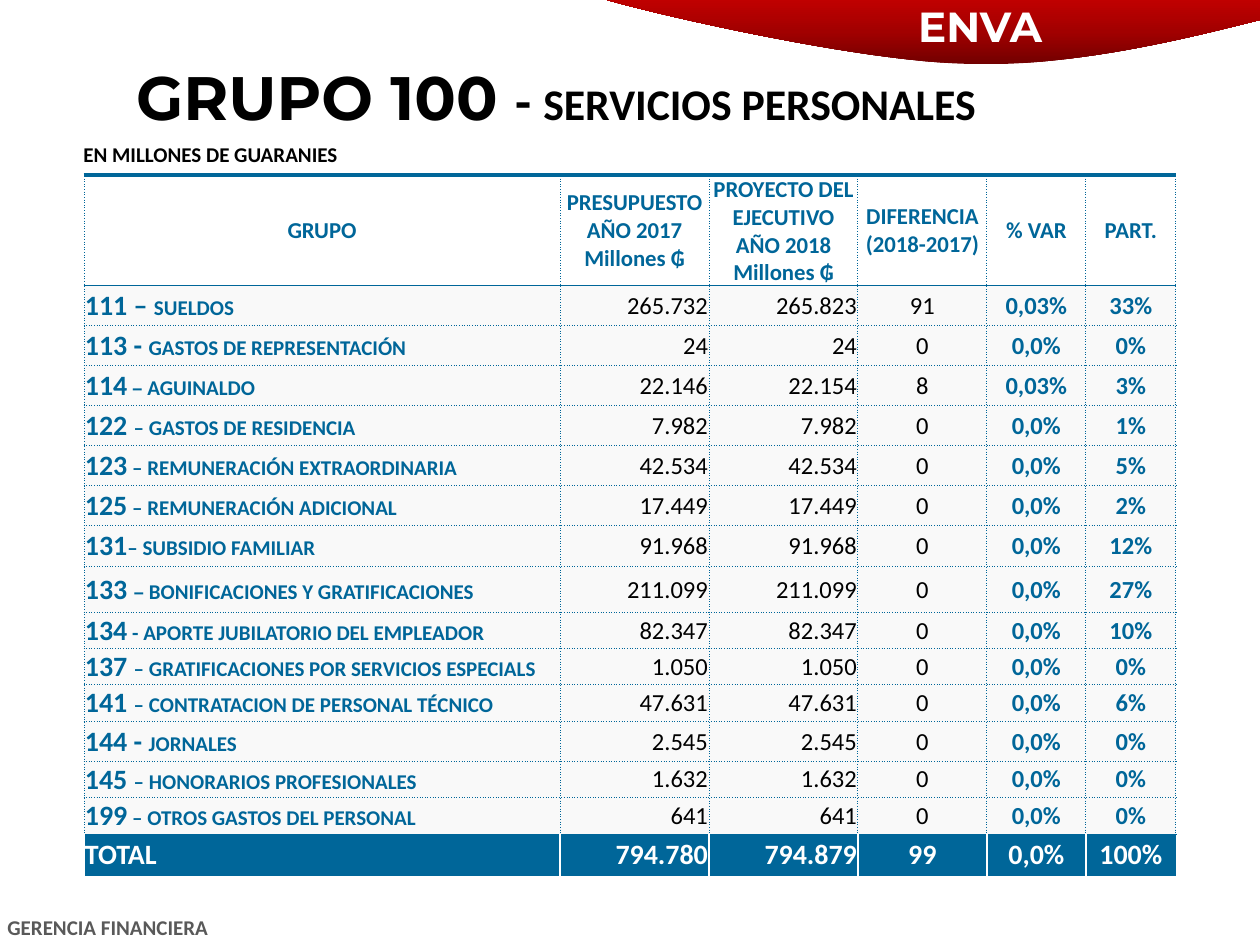
from typing import NamedTuple
from copy import deepcopy

from lxml import etree
from pptx import Presentation
from pptx.dml.color import RGBColor
from pptx.enum.text import MSO_ANCHOR, MSO_AUTO_SIZE, PP_ALIGN
from pptx.oxml.ns import qn
from pptx.util import Pt

LEFT, MID, RIGHT = PP_ALIGN.LEFT, PP_ALIGN.CENTER, PP_ALIGN.RIGHT
CENTRE, BOTTOM = MSO_ANCHOR.MIDDLE, MSO_ANCHOR.BOTTOM
FIXED = MSO_AUTO_SIZE.NONE
EMU = 914400 / 126
HEX = {"blue": "006699", "pale": "F9F9F9", "white": "FFFFFF", "black": "000000",
       "grey": "595959", "dark": "720000", "wine": "A20000", "red": "C00000"}


class Row(NamedTuple):
    code: str
    name: str
    old: str
    new: str
    diff: str
    var: str
    part: str
    high: int
    dash: str = ""


class Line(NamedTuple):
    color: str
    width: float
    dash: str = "solid"


DOT, THIN = Line("blue", 0.5, "sysDot"), Line("blue", 1)
THICK, WHITE = Line("blue", 2.25), Line("white", 1)

WIDE = [476, 149, 149, 129, 99, 90]
ALIGN = [LEFT, RIGHT, RIGHT, MID, MID, MID]
HEAD_HIGH, TOTAL_HIGH = 110, 41
HEADS = [["GRUPO"], ["PRESUPUESTO", "AÑO 2017", "Millones ₲"],
         ["PROYECTO DEL EJECUTIVO", "AÑO 2018", "Millones ₲"],
         ["DIFERENCIA (2018-2017)"], ["% VAR"], ["PART."]]
ROWS = [
    Row("111 – ", "SUELDOS", "265.732", "265.823", "91", "0,03%", "33%", 40),
    Row("113 - ", "GASTOS DE REPRESENTACIÓN", "24", "24", "0", "0,0%", "0%", 40),
    Row("114", " AGUINALDO", "22.146", "22.154", "8", "0,03%", "3%", 40, " –"),
    Row("122 ", "– GASTOS DE RESIDENCIA", "7.982", "7.982", "0", "0,0%", "1%", 40),
    Row("123", " – REMUNERACIÓN EXTRAORDINARIA", "42.534", "42.534", "0", "0,0%", "5%", 40),
    Row("125", " – REMUNERACIÓN ADICIONAL", "17.449", "17.449", "0", "0,0%", "2%", 40),
    Row("131", "– SUBSIDIO FAMILIAR", "91.968", "91.968", "0", "0,0%", "12%", 41),
    Row("133 ", "BONIFICACIONES Y GRATIFICACIONES", "211.099", "211.099", "0", "0,0%", "27%", 46, "– "),
    Row("134", " - APORTE JUBILATORIO DEL EMPLEADOR", "82.347", "82.347", "0", "0,0%", "10%", 36),
    Row("137 ", "– GRATIFICACIONES POR SERVICIOS ESPECIALS", "1.050", "1.050", "0", "0,0%", "0%", 36),
    Row("141 ", "– CONTRATACION DE PERSONAL TÉCNICO", "47.631", "47.631", "0", "0,0%", "6%", 37),
    Row("144 - ", "JORNALES", "2.545", "2.545", "0", "0,0%", "0%", 40),
    Row("145 ", "– HONORARIOS PROFESIONALES", "1.632", "1.632", "0", "0,0%", "0%", 36),
    Row("199", " – OTROS GASTOS DEL PERSONAL", "641", "641", "0", "0,0%", "0%", 37),
]
TOTAL = ["TOTAL", "794.780", "794.879", "99", "0,0%", "100%"]


def px(num: float) -> int:
    return round(num * EMU)


def rgb(name: str) -> RGBColor:
    return RGBColor.from_string(HEX[name])


def write(para, text: str, *, size: float, color: str = "black", font: str = "Calibri",
          bold: bool = True, align=LEFT) -> None:
    """Add one formatted run to a paragraph."""
    para.alignment = align
    run = para.add_run()
    run.text = text
    run.font.size, run.font.name, run.font.bold = Pt(size), font, bold
    run.font.color.rgb = rgb(color)


def label(slide, text: str, x: int, y: int, w: int, h: int, **form) -> None:
    box = slide.shapes.add_textbox(px(x), px(y), px(w), px(h))
    box.text_frame.word_wrap = True
    write(box.text_frame.paragraphs[0], text, **form)


def curve(a, b, c, d, steps: int = 24) -> list:
    """Points along a cubic curve, without its start."""
    out = []
    for i in range(1, steps + 1):
        t = i / steps
        u = 1 - t
        out.append(tuple(px(u**3 * p + 3 * u * u * t * q + 3 * u * t * t * r + t**3 * s)
                         for p, q, r, s in zip(a, b, c, d)))
    return out


def banner(slide) -> None:
    start, low, end = (604, -1), (969, 64), (1260, 20)
    pts = curve(start, (641, 11), (859, 62), low) + curve(low, (1079, 68), (1211, 32), end)
    form = slide.shapes.build_freeform(px(start[0]), px(start[1]))
    form.add_line_segments(pts + [(px(1260), 0)], close=True)
    shape = form.convert_to_shape()
    shape.shadow.inherit = False
    shape.line.fill.background()
    fill = shape.fill
    fill.gradient()
    fill.gradient_angle = 90
    stops = shape._element.spPr.find(".//" + qn("a:gsLst"))
    stops.append(deepcopy(stops[-1]))
    for stop, pos, name in zip(fill.gradient_stops, (0, 0.5, 1), ("dark", "wine", "red")):
        stop.position, stop.color.rgb = pos, rgb(name)


def edge(cell, side: str, line: Line) -> None:
    node = etree.SubElement(cell._tc.get_or_add_tcPr(), qn("a:ln" + side), w=str(Pt(line.width)))
    fill = etree.SubElement(node, qn("a:solidFill"))
    etree.SubElement(fill, qn("a:srgbClr"), val=HEX[line.color])
    etree.SubElement(node, qn("a:prstDash"), val=line.dash)


def style(cell, fill: str, side: Line, top: Line, base: Line, right: Line) -> None:
    """Set borders, fill, margins and anchor of a cell."""
    for name, line in zip("LRTB", (side, right, top, base)):
        edge(cell, name, line)
    if fill:
        cell.fill.solid()
        cell.fill.fore_color.rgb = rgb(fill)
    else:
        cell.fill.background()
    cell.margin_left = cell.margin_right = cell.margin_top = px(1)
    cell.margin_bottom = 0
    cell.vertical_anchor = CENTRE


def budget(slide) -> None:
    highs = [HEAD_HIGH] + [row.high for row in ROWS] + [TOTAL_HIGH]
    table = slide.shapes.add_table(len(highs), len(WIDE), px(84), px(175),
                                   px(sum(WIDE)), px(sum(highs))).table
    table.first_row = table.horz_banding = False
    for col, wide in zip(table.columns, WIDE):
        col.width = px(wide)
    for row, high in zip(table.rows, highs):
        row.height = px(high)

    for col, lines in enumerate(HEADS):
        cell = table.cell(0, col)
        style(cell, "", DOT, THICK, THIN, DOT)
        frame = cell.text_frame
        for i, text in enumerate(lines):
            para = frame.add_paragraph() if i else frame.paragraphs[0]
            write(para, text, size=13, color="blue", align=MID)

    for num, row in enumerate(ROWS, 1):
        for col in range(len(WIDE)):
            cell = table.cell(num, col)
            style(cell, "pale", DOT, THIN if num == 1 else DOT, DOT, DOT)
            para = cell.text_frame.paragraphs[0]
            if col:
                blue = col > 3
                write(para, row[col + 1], size=14, color="blue" if blue else "black",
                      bold=blue, align=ALIGN[col])
                continue
            write(para, row.code, size=16, color="blue")
            if row.dash:
                write(para, row.dash, size=12, color="blue", font="Cambria")
            write(para, row.name, size=12, color="blue")

    for col, text in enumerate(TOTAL):
        cell = table.cell(len(highs) - 1, col)
        style(cell, "blue", WHITE, DOT, THIN, DOT if col == len(WIDE) - 1 else WHITE)
        write(cell.text_frame.paragraphs[0], text, size=16, color="white", align=ALIGN[col])


def heading(slide) -> None:
    title = slide.shapes.title
    title.left, title.top, title.width, title.height = px(105), px(96), px(1170), px(43)
    frame = title.text_frame
    frame.auto_size, frame.word_wrap, frame.vertical_anchor = FIXED, True, BOTTOM
    frame.margin_left = frame.margin_right = frame.margin_top = frame.margin_bottom = px(6)
    para = frame.paragraphs[0]
    write(para, "GRUPO 100 ", size=35, font="Montserrat")
    write(para, "- ", size=30)
    write(para, "SERVICIOS PERSONALES", size=25)
    props = para._p.get_or_add_pPr()
    props.set("marL", "0")
    props.set("indent", str(px(25)))


def main() -> None:
    deck = Presentation()
    deck.slide_width, deck.slide_height = px(1260), px(945)
    slide = deck.slides.add_slide(deck.slide_layouts[5])
    banner(slide)
    label(slide, "ENVA", 898, -6, 164, 63, size=24, color="white", font="Montserrat", align=MID)
    label(slide, "GERENCIA FINANCIERA", -5, 908, 436, 38, size=12, color="grey")
    label(slide, "EN MILLONES DE GUARANIES", 71, 135, 331, 38, size=12)
    budget(slide)
    heading(slide)
    deck.save("out.pptx")


if __name__ == "__main__":
    main()
